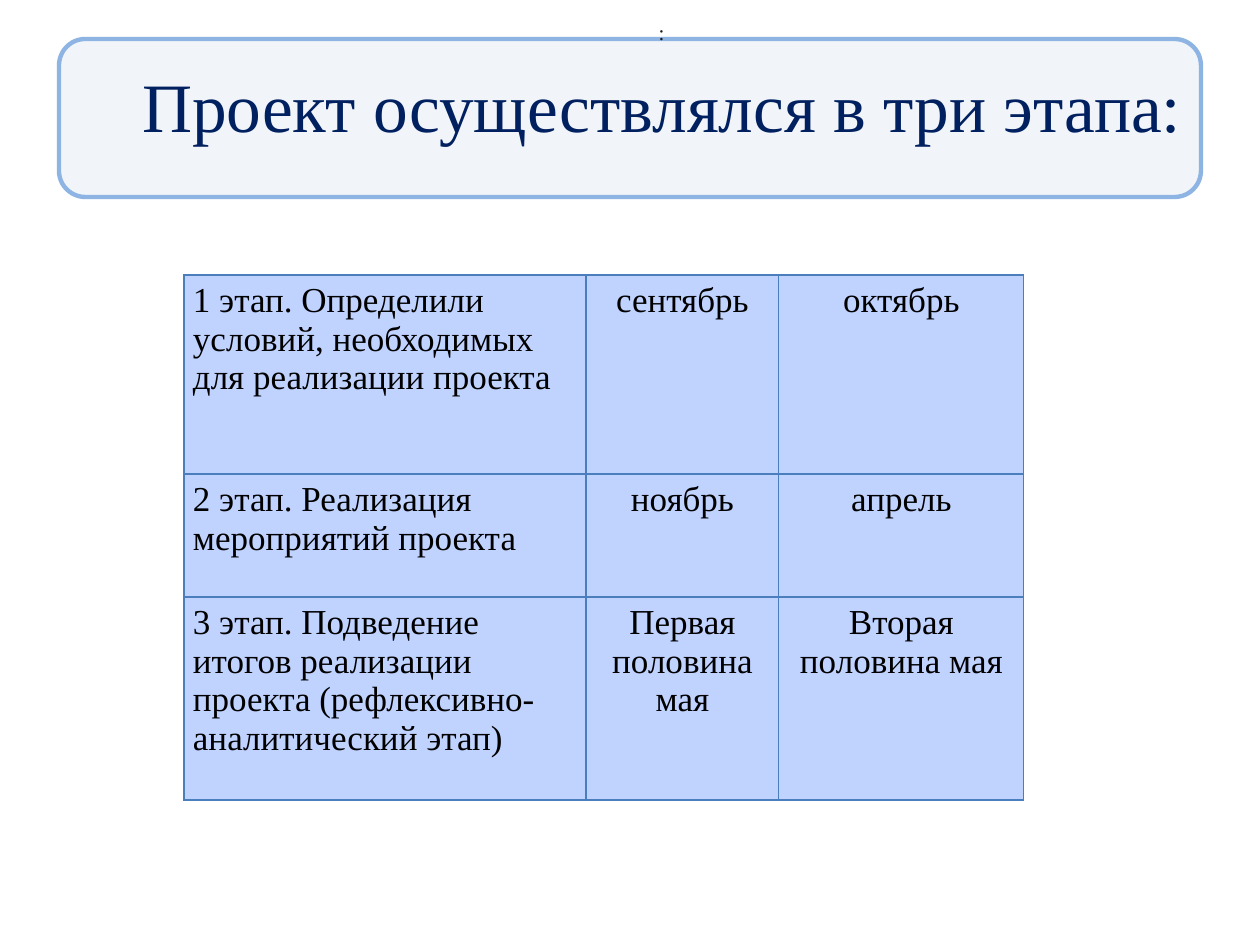
from lxml.etree import SubElement
from pptx import Presentation
from pptx.dml.color import RGBColor
from pptx.enum.shapes import MSO_SHAPE
from pptx.enum.text import MSO_ANCHOR, MSO_AUTO_SIZE, PP_ALIGN
from pptx.oxml import parse_xml
from pptx.oxml.ns import nsdecls, qn
from pptx.util import Emu, Pt

FONT = "Times New Roman"
NAVY, BLACK, DARK = "002060", "000000", "1A1A1A"
BLUE, LIGHT_BLUE, GRID, CELL = "4F81BD", "8EB4E3", "4B7EBC", "C0D3FF"

STAGES = [
    ("1 этап. Определили условий, необходимых для реализации проекта", "сентябрь", "октябрь"),
    ("2 этап. Реализация мероприятий проекта", "ноябрь", "апрель"),
    ("3 этап. Подведение итогов реализации проекта (рефлексивно-аналитический этап)",
     "Первая половина мая", "Вторая половина мая"),
]
COLUMN_WIDTHS = [402, 193, 245]
ROW_HEIGHTS = [199, 123, 203]


def px(length):
    return Emu(round(length * 914400 / 126))


def color(value):
    return RGBColor.from_string(value)


class StageSlide:
    def __init__(self, presentation):
        self.slide = presentation.slides.add_slide(presentation.slide_layouts[5])
        self.shapes = self.slide.shapes

    def set_text(self, frame, text, size, ink, align):
        paragraph = frame.paragraphs[0]
        paragraph.text = text
        paragraph.alignment = align
        paragraph.font.name = FONT
        paragraph.font.size = Pt(size)
        paragraph.font.color.rgb = color(ink)
        return paragraph

    def banner(self, *box):
        banner = self.shapes.add_shape(MSO_SHAPE.FLOWCHART_ALTERNATE_PROCESS, *map(px, box))
        banner.shadow.inherit = False
        banner.fill.solid()
        banner.fill.fore_color.rgb = color(BLUE)
        tint = banner._element.spPr.find(qn("a:solidFill"))[0]
        SubElement(tint, qn("a:alpha"), val="8000")
        banner.line.color.rgb = color(LIGHT_BLUE)
        banner.line.width = Pt(2.5)
        self.shapes._spTree.insert(2, banner._element)

    def title(self, text, *box):
        title = self.shapes.title
        title.left, title.top, title.width, title.height = map(px, box)
        title.text_frame.vertical_anchor = MSO_ANCHOR.MIDDLE
        self.set_text(title.text_frame, text, 39.6, NAVY, PP_ALIGN.CENTER)

    def mark(self, text, indent, *box):
        mark = self.shapes.add_textbox(*map(px, box))
        frame = mark.text_frame
        frame.word_wrap = False
        frame.auto_size = MSO_AUTO_SIZE.SHAPE_TO_FIT_TEXT
        frame.vertical_anchor = MSO_ANCHOR.MIDDLE
        paragraph = self.set_text(frame, text, 12, DARK, PP_ALIGN.CENTER)
        paragraph._p.get_or_add_pPr().set("indent", str(px(indent)))

    def borders(self, cell):
        properties = cell._tc.get_or_add_tcPr()
        for index, side in enumerate(("lnL", "lnR", "lnT", "lnB")):
            properties.insert(index, parse_xml(
                f'<a:{side} {nsdecls("a")} w="{Pt(0.75)}"><a:solidFill>'
                f'<a:srgbClr val="{GRID}"/></a:solidFill></a:{side}>'))

    def table(self, rows, left, top, widths, heights):
        table = self.shapes.add_table(
            len(rows), len(widths), px(left), px(top),
            px(sum(widths)), px(sum(heights))).table
        table.first_row = table.horz_banding = False
        for column, width in zip(table.columns, widths):
            column.width = px(width)
        for row, height, texts in zip(table.rows, heights, rows):
            row.height = px(height)
            for index, (cell, text) in enumerate(zip(row.cells, texts)):
                cell.margin_left = cell.margin_right = px(9)
                cell.margin_top = cell.margin_bottom = px(6)
                cell.fill.solid()
                cell.fill.fore_color.rgb = color(CELL)
                self.borders(cell)
                align = PP_ALIGN.CENTER if index else PP_ALIGN.LEFT
                self.set_text(cell.text_frame, text, 20, BLACK, align)


def main():
    presentation = Presentation()
    presentation.slide_width, presentation.slide_height = px(1260), px(945)
    stages = StageSlide(presentation)
    stages.banner(59, 39, 1142, 158)
    stages.title("Проект осуществлялся в три этапа:", 95, 26, 1134, 158)
    stages.table(STAGES, 184, 275, COLUMN_WIDTHS, ROW_HEIGHTS)
    stages.mark(":", 62, 583, 13, 95, 38)
    presentation.save("out.pptx")


if __name__ == "__main__":
    main()
